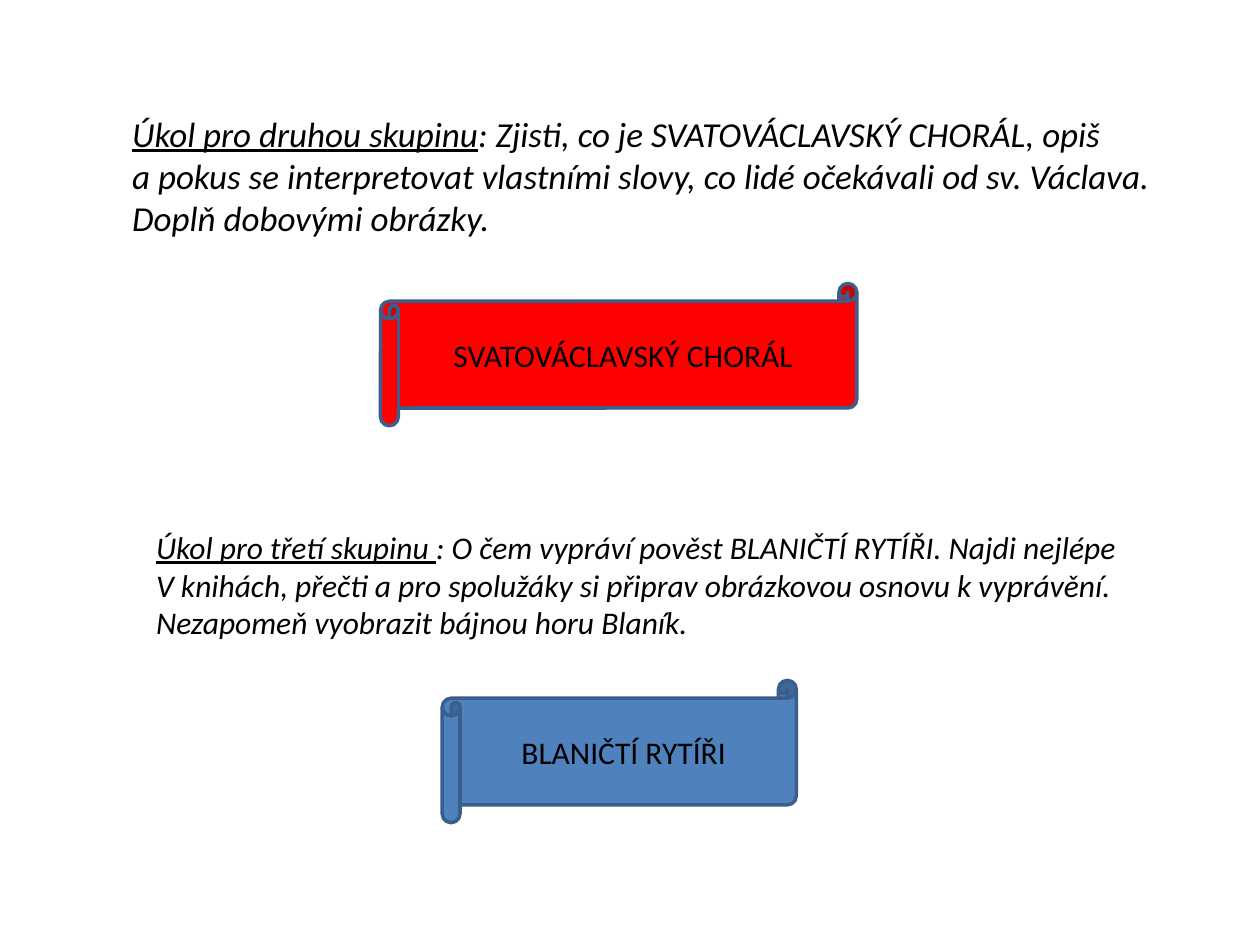
from pptx import Presentation
from pptx.dml.color import RGBColor
from pptx.enum.shapes import MSO_SHAPE as Preset
from pptx.enum.text import MSO_ANCHOR as Anchor, MSO_AUTO_SIZE as AutoSize, PP_ALIGN as Align
from pptx.util import Inches, Pt


def color(hex_code):
    """Turn a hex string into a colour."""
    return RGBColor.from_string(hex_code)


def style_run(run, size, italic=False, underline=False):
    """Apply the slide's font to a run."""
    font = run.font
    font.name = "Calibri"
    font.size = Pt(size)
    font.color.rgb = color("000000")
    font.italic = italic
    font.underline = underline


def add_task(slide, box, size, heading, lines):
    """Add an italic task text that opens with an underlined heading."""
    frame = slide.shapes.add_textbox(*map(Inches, box)).text_frame
    frame.word_wrap = False
    frame.auto_size = AutoSize.SHAPE_TO_FIT_TEXT
    opening = frame.paragraphs[0]
    heading_run = opening.add_run()
    heading_run.text = heading
    style_run(heading_run, size, italic=True, underline=True)
    for index, line in enumerate(lines):
        paragraph = frame.add_paragraph() if index else opening
        run = paragraph.add_run()
        run.text = line
        style_run(run, size, italic=True)


def add_scroll(slide, box, fill, title):
    """Add a horizontal scroll with a centred title."""
    scroll = slide.shapes.add_shape(Preset.HORIZONTAL_SCROLL, *map(Inches, box))
    scroll.shadow.inherit = False
    scroll.fill.solid()
    scroll.fill.fore_color.rgb = color(fill)
    scroll.line.color.rgb = color("3A5F8C")
    scroll.line.width = Pt(2)
    frame = scroll.text_frame
    frame.text = title
    frame.vertical_anchor = Anchor.MIDDLE
    paragraph = frame.paragraphs[0]
    paragraph.alignment = Align.CENTER
    style_run(paragraph.runs[0], 18)


def main():
    """Build the slide with the tasks of two groups."""
    deck = Presentation()
    deck.slide_width, deck.slide_height = Inches(10), Inches(7.5)
    slide = deck.slides.add_slide(deck.slide_layouts[6])
    add_task(slide, (0.95, 0.84, 8.35, 1.11), 20, "Úkol pro druhou skupinu", [
        ": Zjisti, co je SVATOVÁCLAVSKÝ CHORÁL, opiš",
        "a pokus se interpretovat vlastními slovy, co lidé očekávali od sv. Václava.",
        "Doplň dobovými obrázky.",
    ])
    add_scroll(slide, (3.02, 2.25, 3.78, 1.13), "FF0000", "SVATOVÁCLAVSKÝ CHORÁL")
    add_task(slide, (1.14, 4.14, 7.96, 1.01), 18, "Úkol pro třetí skupinu ", [
        ": O čem vypráví pověst BLANIČTÍ RYTÍŘI. Najdi nejlépe",
        "V knihách, přečti a pro spolužáky si připrav obrázkovou osnovu k vyprávění.",
        "Nezapomeň vyobrazit bájnou horu Blaník.",
    ])
    add_scroll(slide, (3.51, 5.4, 2.81, 1.13), "4F81BD", "BLANIČTÍ RYTÍŘI")
    deck.save("out.pptx")


if __name__ == "__main__":
    main()
